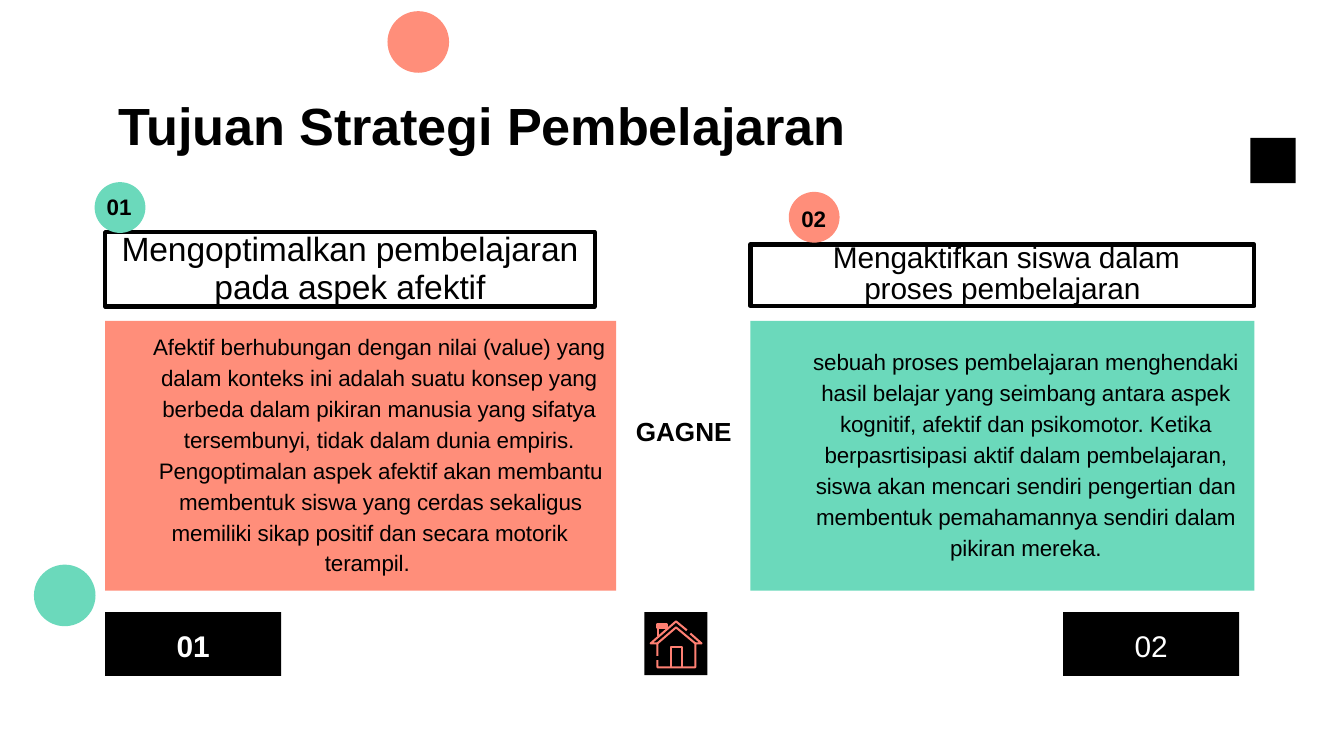
from dataclasses import dataclass

from pptx import Presentation
from pptx.dml.color import RGBColor
from pptx.enum.shapes import MSO_SHAPE
from pptx.enum.text import MSO_ANCHOR, PP_ALIGN
from pptx.util import Pt

RECTANGLE, OVAL = MSO_SHAPE.RECTANGLE, MSO_SHAPE.OVAL
LEFT, CENTER = PP_ALIGN.LEFT, PP_ALIGN.CENTER
TOP = MSO_ANCHOR.TOP


@dataclass(frozen=True)
class Theme:
    font: str = "Arial"
    black: str = "000000"
    white: str = "FFFFFF"
    coral: str = "FF8E7A"
    mint: str = "6BD9BB"
    icon: str = "FF8073"
    title: float = 28
    label: float = 14
    button: float = 16
    body: float = 12
    border: float = 2.25
    icon_line: float = 1.1
    tracking: int = -5  # hundredths of a point


THEME = Theme()

# Content: a paragraph is (text, left indent, line spacing, space before)
TITLE = "Tujuan Strategi Pembelajaran"
AUTHOR = "GAGNE"
GOALS = [
    {
        "number": "01", "left": 56.3, "width": 273.8, "color": THEME.coral,
        "badge": (50.7, 97.6), "number_at": (56.3, 102.6),
        "heading_box": (124.4, 262.3, 39.8), "heading_size": 18,
        "heading": [
            ("Mengoptimalkan pembelajaran", 0, Pt(19.5), 0),
            ("pada aspek afektif", 0, Pt(20.4), 0),
        ],
        "body_inset": 4.5,
        "body": [
            ("Afektif berhubungan dengan nilai (value) yang dalam konteks ini "
             "adalah suatu konsep yang berbeda dalam pikiran manusia yang "
             "sifatya tersembunyi, tidak dalam dunia empiris.", 20, 1.15, 0),
            ("Pengoptimalan aspek afektif akan membantu membentuk siswa yang "
             "cerdas sekaligus", 21.6, 1.15, 0),
            ("memiliki sikap positif dan secara motorik", 10, 1.0, 2.2),
            ("terampil.", 7.2, 1.0, 2.1),
        ],
        "button_left": 56.3, "button_bold": True,
    },
    {
        "number": "02", "left": 402, "width": 270, "color": THEME.mint,
        "badge": (422.6, 102.8), "number_at": (428.4, 108.9),
        "heading_box": (131, 270, 33), "heading_size": 16,
        "heading": [
            ("Mengaktifkan siswa dalam", 4.3, Pt(16.1), 0),
            ("proses pembelajaran", 0, Pt(16.8), 0),
        ],
        "body_inset": 12.7,
        "body": [
            ("sebuah proses pembelajaran menghendaki hasil belajar yang "
             "seimbang antara aspek kognitif, afektif dan psikomotor. Ketika "
             "berpasrtisipasi aktif dalam pembelajaran, siswa akan mencari "
             "sendiri pengertian dan membentuk pemahamannya sendiri dalam "
             "pikiran mereka.", 25.2, 1.15, 0),
        ],
        "button_left": 569.5, "button_bold": False,
    },
]
BADGE_COLORS = [THEME.mint, THEME.coral]

# Decoration: shape, left, top, side, colour
DECORATION = [
    (RECTANGLE, 669.8, 73.9, 24.3, THEME.black),
    (OVAL, 207.6, 6, 33, THEME.coral),
    (OVAL, 18.2, 302.5, 33, THEME.mint),
]
CARD_TOP, CARD_HEIGHT = 171.9, 144.6
BUTTON_TOP, BUTTON_WIDTH, BUTTON_HEIGHT = 327.9, 94.3, 34.2
BADGE_SIZE = 27.2
HOME_LEFT, HOME_SIZE = 345.2, 33.8

# House strokes, in points from the corner of the home button
HOUSE = [
    [(7, 23.5), (7, 16.8), (3.4, 16.8), (17, 5), (22.8, 9.8)],
    [(24.6, 11.5), (30.6, 16.8), (27.3, 16.8), (27.3, 29.6), (7, 29.6), (7, 25.8)],
    [(7, 16.8), (17, 8.2), (27.3, 16.8)],
    [(14.3, 29.6), (14.3, 18.9), (20.3, 18.9), (20.3, 29.6)],
    [(7.5, 13), (7.5, 8.3), (6.8, 8.3), (6.8, 6.7), (12.3, 6.7), (12.3, 8.3), (7.5, 8.3)],
]


def color(value):
    return RGBColor.from_string(value)


def add_box(page, kind, left, top, width, height, fill=None, line=None):
    box = page.shapes.add_shape(kind, Pt(left), Pt(top), Pt(width), Pt(height))
    box.shadow.inherit = False
    if fill:
        box.fill.solid()
        box.fill.fore_color.rgb = color(fill)
    else:
        box.fill.background()
    if line:
        box.line.color.rgb = color(line)
        box.line.width = Pt(THEME.border)
    else:
        box.line.fill.background()
    return box


def write(box, paragraphs, size, ink=THEME.black, bold=False, align=CENTER, inset=0, wrap=True):
    frame = box.text_frame
    frame.word_wrap = wrap
    frame.vertical_anchor = TOP
    frame.margin_left = frame.margin_right = frame.margin_bottom = 0
    frame.margin_top = Pt(inset)
    for index, (text, indent, spacing, before) in enumerate(paragraphs):
        para = frame.paragraphs[0] if index == 0 else frame.add_paragraph()
        para.alignment = align
        para.line_spacing = spacing
        para.space_before = Pt(before)
        properties = para._p.get_or_add_pPr()
        properties.set("marL", str(Pt(indent)))
        properties.set("indent", "0")
        span = para.add_run()
        span.text = text
        span.font.name = THEME.font
        span.font.size = Pt(size)
        span.font.bold = bold
        span.font.color.rgb = color(ink)
        span._r.get_or_add_rPr().set("spc", str(THEME.tracking))


def add_label(page, text, left, top, width, height, size):
    box = page.shapes.add_textbox(Pt(left), Pt(top), Pt(width), Pt(height))
    write(box, [(text, 0.9, 1.0, 0)], size, bold=True, align=LEFT, inset=1, wrap=False)


def add_goal(page, goal, badge_color):
    # Heading and card
    top, width, height = goal["heading_box"]
    heading = add_box(page, RECTANGLE, goal["left"], top, width, height, line=THEME.black)
    write(heading, goal["heading"], goal["heading_size"])
    card = add_box(page, RECTANGLE, goal["left"], CARD_TOP, goal["width"], CARD_HEIGHT, goal["color"])
    write(card, goal["body"], THEME.body, inset=goal["body_inset"])
    # Button below
    button = add_box(page, RECTANGLE, goal["button_left"], BUTTON_TOP,
                     BUTTON_WIDTH, BUTTON_HEIGHT, THEME.black)
    write(button, [(goal["number"], 0, 1.0, 0)], THEME.button, THEME.white,
          goal["button_bold"], inset=8.5)
    # Numbered badge
    add_box(page, OVAL, *goal["badge"], BADGE_SIZE, BADGE_SIZE, badge_color)
    add_label(page, goal["number"], *goal["number_at"], 15.2, 16.4, THEME.body)


def add_home(page):
    add_box(page, RECTANGLE, HOME_LEFT, BUTTON_TOP, HOME_SIZE, HOME_SIZE, THEME.black)
    for stroke in HOUSE:
        points = [(Pt(HOME_LEFT + x), Pt(BUTTON_TOP + y)) for x, y in stroke]
        builder = page.shapes.build_freeform(*points[0])
        builder.add_line_segments(points[1:], close=False)
        outline = builder.convert_to_shape()
        outline.shadow.inherit = False
        outline.fill.background()
        outline.line.color.rgb = color(THEME.icon)
        outline.line.width = Pt(THEME.icon_line)


def main():
    deck = Presentation()
    deck.slide_width, deck.slide_height = Pt(720), Pt(405)
    page = deck.slides.add_slide(deck.slide_layouts[6])
    for kind, left, top, side, fill in DECORATION:
        add_box(page, kind, left, top, side, side, fill)
    add_label(page, TITLE, 62.6, 49.2, 396, 35.3, THEME.title)
    for goal, badge_color in zip(GOALS, BADGE_COLORS):
        add_goal(page, goal, badge_color)
    add_home(page)
    add_label(page, AUTHOR, 339.8, 221.8, 53.3, 18.7, THEME.label)
    deck.save("out.pptx")


if __name__ == "__main__":
    main()
